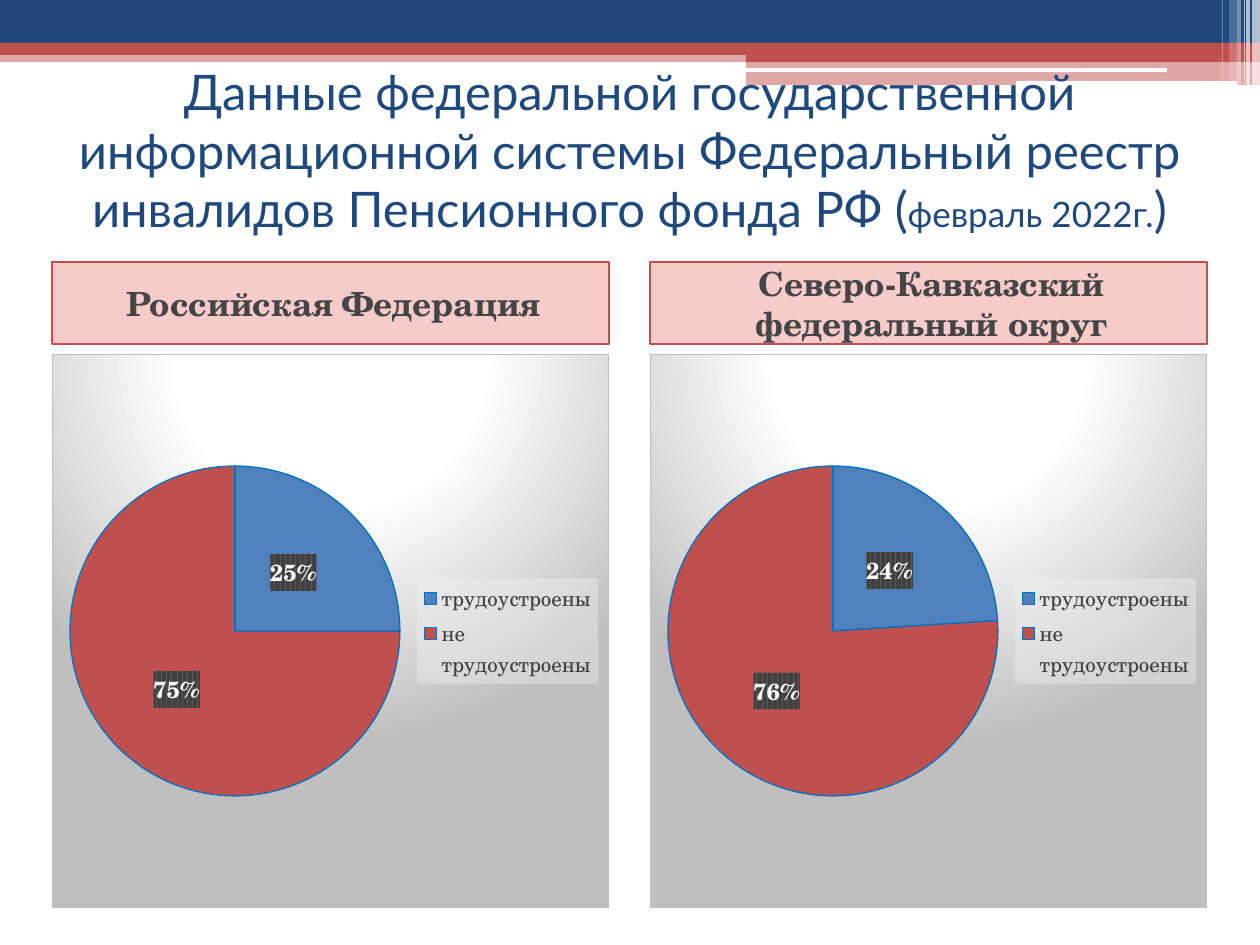
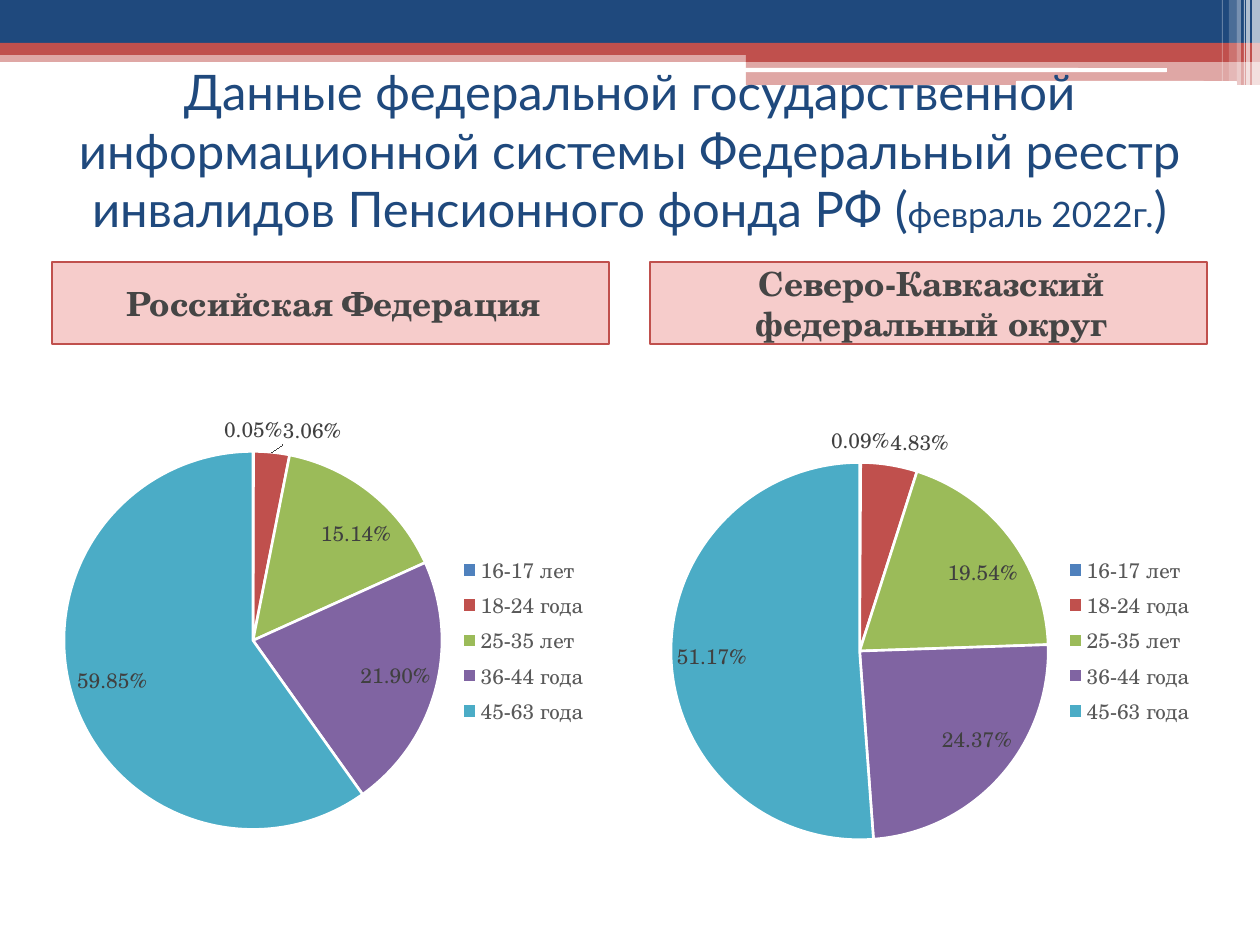
from lxml import etree
from pptx import Presentation
from pptx import util as u
from pptx.chart.data import CategoryChartData
from pptx.dml.color import RGBColor
from pptx.enum import chart as ch, shapes, text
from pptx.oxml import parse_xml
from pptx.oxml.ns import nsdecls, qn

C = {
    "white": "FFFFFF", "navy": "1F497D", "red": "C0504D", "pink": "DD3530",
    "blue": "4F81BD", "green": "9BBB59", "purple": "8064A2", "aqua": "4BACC6",
    "heading": "454545", "dark": "404040", "text": "595959", "black": "000000",
    "grey": "BFBFBF", "pale": "F2F2F2", "outline": "0070C0",
}
TITLE_FONT, BODY_FONT = "Lato", "TeX Gyre Schola"
PIE_COLORS = ["blue", "red", "green", "purple", "aqua"]
REGIONS = ["Российская Федерация", "Северо-Кавказский федеральный округ"]
COLUMN_X = [52, 650]
COLUMN_W = 557
JOBS = ["трудоустроены", "не трудоустроены"]
JOB_SHARES = [(25, 75), (24, 76)]
AGES = ["16-17 лет", "18-24 года", "25-35 лет", "36-44 года", "45-63 года"]
AGE_SHARES = [
    (0.0005, 0.0306, 0.1514, 0.219, 0.5985),
    (0.0009, 0.0483, 0.1954, 0.2437, 0.5117),
]
AGE_BOXES = [(53, 373, 548, 535), (660, 373, 547, 535)]
AGE_PLOTS = [(0.02, 0.02, 0.69, 0.96), (0.02, 0.04, 0.69, 0.96)]
RECT, ROUND = shapes.MSO_SHAPE.RECTANGLE, shapes.MSO_SHAPE.ROUNDED_RECTANGLE
BANDS = [
    (RECT, (0, 50, 1260, 12), "red", 50),
    (RECT, (0, 0, 1260, 43), "navy", 100),
    (RECT, (0, 43, 1260, 12), "red", 100),
    (RECT, (746, 49, 514, 13), "red", 100),
    (RECT, (746, 61, 514, 24), "red", 50),
    (ROUND, (745, 68, 422, 4), "white", 100),
    (ROUND, (1016, 81, 221, 5), "white", 100),
    (RECT, (1252, 0, 8, 86), "white", 65),
    (RECT, (1246, 0, 4, 86), "white", 65),
    (RECT, (1244, 0, 1, 86), "white", 60),
    (RECT, (1237, 0, 4, 86), "white", 40),
    (RECT, (1229, 0, 8, 81), "white", 20),
    (RECT, (1222, 0, 1, 81), "white", 30),
]


def px(n):
    return u.Emu(round(n * 914400 / 126))


def emu(box):
    return [px(n) for n in box]


def rgb(name):
    return RGBColor.from_string(C[name])


def set_font(font, name, color, size=None, bold=None):
    font.name = name
    font.color.rgb = rgb(color)
    if size:
        font.size = u.Pt(size)
    if bold is not None:
        font.bold = bold


def add_box(s, kind, box, color, alpha=100):
    sp = s.shapes.add_shape(kind, *emu(box))
    sp.shadow.inherit = False
    sp.fill.solid()
    sp.fill.fore_color.rgb = rgb(color)
    sp.line.fill.background()
    if alpha < 100:
        clr = sp.element.xpath("./p:spPr/a:solidFill/a:srgbClr")[0]
        etree.SubElement(clr, qn("a:alpha")).set("val", str(alpha * 1000))
    return sp


def add_bands(s, layout):
    for i, (kind, box, color, alpha) in enumerate(BANDS):
        sp = add_box(s, kind, box, color, alpha)
        sp.element.nvSpPr.cNvPr.set("id", str(20 + i))
        layout.shapes.element.append(sp.element)


def add_title(s):
    title = s.shapes.title
    title.left, title.top, title.width, title.height = emu((52, 76, 1155, 147))
    tf = title.text_frame
    tf.word_wrap = True
    tf.auto_size = text.MSO_AUTO_SIZE.NONE
    tf.vertical_anchor = text.MSO_ANCHOR.MIDDLE
    p = tf.paragraphs[0]
    p.alignment = text.PP_ALIGN.CENTER
    set_font(p.font, TITLE_FONT, "navy")
    for words, size in [
        ("Данные федеральной государственной информационной системы "
         "Федеральный реестр инвалидов Пенсионного фонда РФ (", 28),
        ("февраль 2022г.", 20),
        (")", 28),
    ]:
        r = p.add_run()
        r.text = words
        r.font.size = u.Pt(size)


def add_heading(s, box, words):
    sp = add_box(s, RECT, box, "pink", 25)
    sp.line.color.rgb = rgb("red")
    sp.line.width = u.Pt(1)
    tf = sp.text_frame
    tf.word_wrap = True
    tf.margin_left = px(19)
    tf.vertical_anchor = text.MSO_ANCHOR.MIDDLE
    p = tf.paragraphs[0]
    p.text = words
    p.alignment = text.PP_ALIGN.CENTER
    set_font(p.font, BODY_FONT, "heading", 19, True)


def add_pie(s, box, cats, vals, outline, line_width, legend_color):
    data = CategoryChartData()
    data.categories = cats
    data.add_series("Series 1", vals)
    chart = s.shapes.add_chart(ch.XL_CHART_TYPE.PIE, *emu(box), data).chart
    chart.has_title = False
    set_font(chart.font, BODY_FONT, "black", 10)
    chart.has_legend = True
    chart.legend.position = ch.XL_LEGEND_POSITION.RIGHT
    chart.legend.include_in_layout = False
    set_font(chart.legend.font, BODY_FONT, legend_color, 12)
    plot = chart.plots[0]
    plot.vary_by_categories = True
    for i in range(len(cats)):
        fmt = plot.series[0].points[i].format
        fmt.fill.solid()
        fmt.fill.fore_color.rgb = rgb(PIE_COLORS[i])
        fmt.line.color.rgb = rgb(outline)
        fmt.line.width = u.Pt(line_width)
    return chart


def label_pie(chart, number_format, position, color, size, bold, percent):
    labels = chart.plots[0].series[0].data_labels
    labels.show_percentage = percent
    labels.show_value = not percent
    labels.number_format = number_format
    labels.number_format_is_linked = False
    labels.position = position
    set_font(labels.font, BODY_FONT, color, size, bold)


def chart_sppr(content):
    return parse_xml(f'<c:spPr {nsdecls("c", "a")}>{content}</c:spPr>')


def solid(color, alpha=100):
    return (f'<a:solidFill><a:srgbClr val="{C[color]}">'
            f'<a:alpha val="{alpha * 1000}"/></a:srgbClr></a:solidFill>')


def style_job_chart(chart):
    stops = "".join(
        f'<a:gs pos="{pos * 1000}"><a:srgbClr val="{C[color]}"/></a:gs>'
        for pos, color in [(0, "white"), (39, "white"), (100, "grey")])
    root = chart.element
    root.find(qn("c:chart")).addnext(chart_sppr(
        f'<a:gradFill><a:gsLst>{stops}</a:gsLst><a:path path="circle">'
        '<a:fillToRect l="50000" t="-80000" r="50000" b="180000"/></a:path>'
        f'</a:gradFill><a:ln w="9525">{solid("grey")}</a:ln>'))
    root.xpath(".//c:legend/c:txPr")[0].addprevious(
        chart_sppr(solid("pale", 39)))
    root.xpath(".//c:dLbls/c:numFmt")[0].addnext(chart_sppr(
        f'<a:pattFill prst="dkVert"><a:fgClr><a:srgbClr val="{C["dark"]}"/>'
        f'</a:fgClr><a:bgClr><a:srgbClr val="{C["text"]}"/></a:bgClr>'
        '</a:pattFill>'))


def set_plot_layout(chart, frame):
    area = chart.element.xpath(".//c:plotArea")[0]
    for old in area.findall(qn("c:layout")):
        area.remove(old)
    modes = '<c:xMode val="edge"/><c:yMode val="edge"/>'
    sizes = "".join(f'<c:{k} val="{v}"/>' for k, v in zip("xywh", frame))
    area.insert(0, parse_xml(
        f'<c:layout {nsdecls("c")}><c:manualLayout>'
        f'<c:layoutTarget val="inner"/>{modes}{sizes}'
        '</c:manualLayout></c:layout>'))


def add_job_chart(s, box, vals):
    chart = add_pie(s, box, JOBS, vals, "outline", 0.75, "dark")
    label_pie(chart, "0%", ch.XL_LABEL_POSITION.CENTER, "white", 13.3, True,
              True)
    style_job_chart(chart)


def add_age_chart(s, box, vals, frame):
    chart = add_pie(s, box, AGES, vals, "white", 1.5, "text")
    label_pie(chart, "0.00%", ch.XL_LABEL_POSITION.BEST_FIT, "dark", 12,
              False, False)
    set_plot_layout(chart, frame)


def add_region_slide(prs, layout):
    s = prs.slides.add_slide(layout)
    add_title(s)
    for x, region in zip(COLUMN_X, REGIONS):
        add_heading(s, (x, 262, COLUMN_W, 82), region)
    return s


def main():
    prs = Presentation()
    prs.slide_width, prs.slide_height = px(1260), px(945)
    layout = prs.slide_layouts[5]

    s = add_region_slide(prs, layout)
    add_bands(s, layout)
    for x, vals in zip(COLUMN_X, JOB_SHARES):
        add_job_chart(s, (x, 354, COLUMN_W, 554), vals)

    s = add_region_slide(prs, layout)
    for box, vals, frame in zip(AGE_BOXES, AGE_SHARES, AGE_PLOTS):
        add_age_chart(s, box, vals, frame)

    prs.save("out.pptx")


if __name__ == "__main__":
    main()
